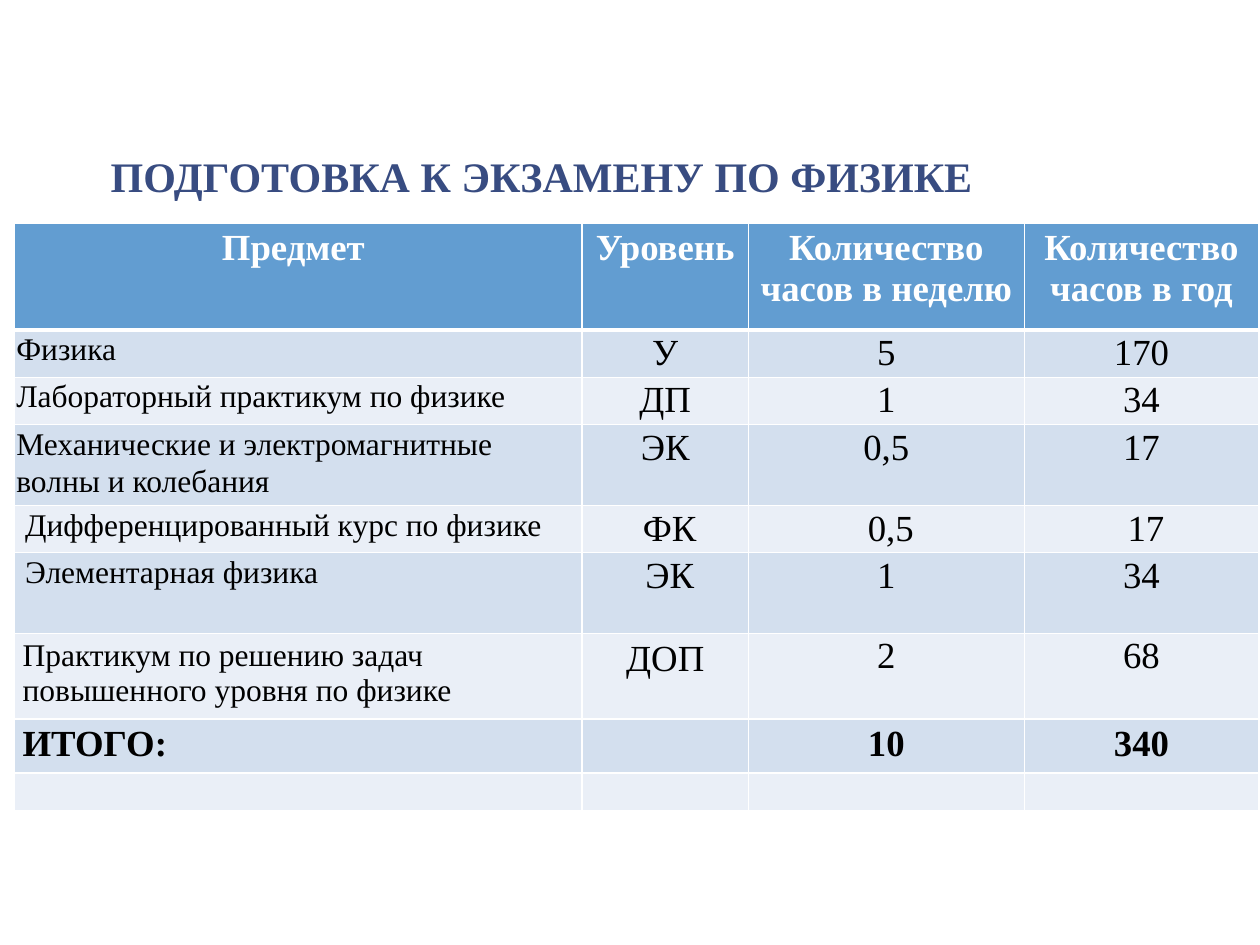
from lxml import etree
from pptx import Presentation
from pptx.dml.color import RGBColor
from pptx.enum import text
from pptx.oxml import ns
from pptx.util import Inches, Pt

# Content
TITLE = "ПОДГОТОВКА К ЭКЗАМЕНУ ПО ФИЗИКЕ"
ROWS = [
    ("Предмет ", "Уровень", "Количество часов в неделю", "Количество часов в год"),
    ("Физика", "У", "5", "170"),
    ("Лабораторный практикум по физике", "ДП", "1", "34"),
    ("Механические и электромагнитные волны и колебания", "ЭК", "0,5", "17"),
    ("Дифференцированный курс по физике", "ФК", "0,5", "17"),
    ("Элементарная физика", "ЭК", "1", "34"),
    ("Практикум по решению задач повышенного уровня по физике", "ДОП", "2", "68"),
    ("ИТОГО:", "", "10", "340"),
    ("", "", "", ""),
]

# Layout and format
COLUMN_WIDTHS = [4.51, 1.32, 2.19, 1.86]
ROW_HEIGHTS = [0.85, 0.37, 0.37, 0.64, 0.37, 0.64, 0.68, 0.42, 0.3]
HEADER, TOTAL = 0, 7
ROOMY_ROWS = {HEADER, TOTAL, 8}
ROOMY_CELLS = {(6, 0), (6, 1)}
INDENTED_CELLS = {(4, 0), (4, 1), (4, 2), (4, 3), (5, 0), (5, 1)}
FONT = "Times New Roman"
COLORS = {
    "title": "384C81",
    "header": "629DD1",
    "odd": "D3DFEE",
    "even": "EAEFF7",
    "white": "FFFFFF",
    "black": "000000",
}


def rgb(name):
    return RGBColor.from_string(COLORS[name])


def format_font(font, size, bold, color):
    for name, value in {"name": FONT, "size": Pt(size), "bold": bold}.items():
        setattr(font, name, value)
    font.color.rgb = rgb(color)


def set_borders(cell, bottom):
    properties = cell._tc.get_or_add_tcPr()
    widths = {"a:lnL": 1, "a:lnR": 1, "a:lnT": 1, "a:lnB": bottom}
    for position, (tag, width) in enumerate(widths.items()):
        line = etree.Element(ns.qn(tag), w=str(Pt(width)))
        fill = etree.SubElement(line, ns.qn("a:solidFill"))
        etree.SubElement(fill, ns.qn("a:srgbClr"), val=COLORS["white"])
        properties.insert(position, line)


def fill_cell(cell, row, column, content):
    roomy = row in ROOMY_ROWS or (row, column) in ROOMY_CELLS
    side, edge = (0.07, 0.04) if roomy else (0.02, 0)
    margins = {"margin_left": side, "margin_right": side,
               "margin_top": edge, "margin_bottom": edge}
    for name, value in margins.items():
        setattr(cell, name, Inches(value))
    band = "header" if row == HEADER else "odd" if row % 2 else "even"
    cell.fill.solid()
    cell.fill.fore_color.rgb = rgb(band)
    set_borders(cell, 3 if row == HEADER else 1)

    paragraph = cell.text_frame.paragraphs[0]
    if not content:
        etree.SubElement(paragraph._p, ns.qn("a:endParaRPr"), sz="1200")
        return
    if column or row == HEADER:
        paragraph.alignment = text.PP_ALIGN.CENTER
    if not roomy:
        paragraph.line_spacing = 1.07
    if (row, column) in INDENTED_CELLS:
        paragraph._p.get_or_add_pPr().set("marL", str(Inches(0.07)))
    run = paragraph.add_run()
    run.text = content
    size = 21 if column or row in (HEADER, TOTAL) else 18
    format_font(run.font, size, row in (HEADER, TOTAL),
                "white" if row == HEADER else "black")


def main():
    presentation = Presentation()
    presentation.slide_width, presentation.slide_height = Inches(10), Inches(7.5)
    slide = presentation.slides.add_slide(presentation.slide_layouts[6])

    # Title
    box = slide.shapes.add_textbox(Inches(0.78), Inches(1.02), Inches(8.62), Inches(0.75))
    box.text_frame.word_wrap = True
    box.text_frame.vertical_anchor = text.MSO_ANCHOR.MIDDLE
    run = box.text_frame.paragraphs[0].add_run()
    run.text = TITLE
    format_font(run.font, 24, True, "title")

    # Table of hours
    table = slide.shapes.add_table(
        len(ROWS), len(COLUMN_WIDTHS), Inches(0.11), Inches(1.77),
        Inches(sum(COLUMN_WIDTHS)), Inches(sum(ROW_HEIGHTS))).table
    for column, width in zip(table.columns, COLUMN_WIDTHS):
        column.width = Inches(width)
    for row, height in zip(table.rows, ROW_HEIGHTS):
        row.height = Inches(height)
    for row, contents in enumerate(ROWS):
        for column, content in enumerate(contents):
            fill_cell(table.cell(row, column), row, column, content)

    presentation.save("out.pptx")


if __name__ == "__main__":
    main()
